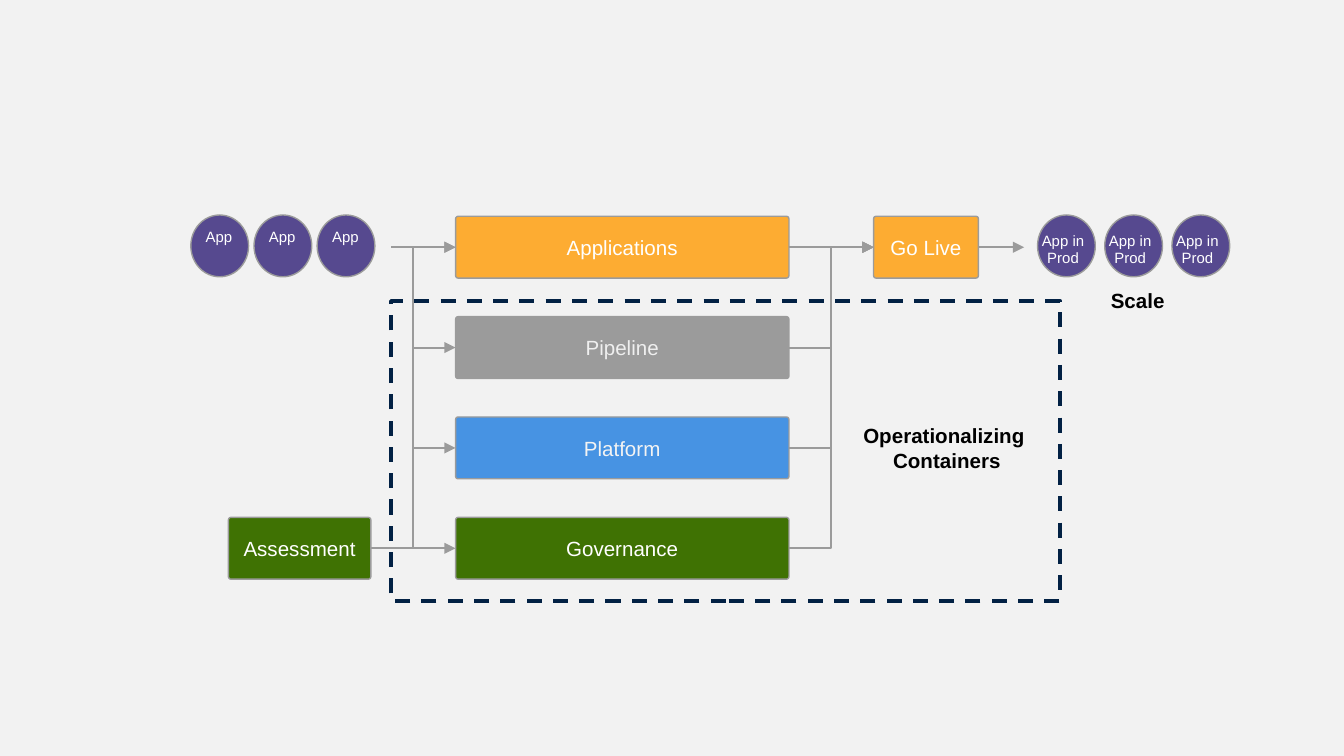
from lxml.etree import SubElement
from pptx import Presentation
from pptx.dml.color import RGBColor
from pptx.enum.dml import MSO_LINE
from pptx.enum.shapes import MSO_CONNECTOR, MSO_SHAPE
from pptx.enum.text import MSO_ANCHOR, PP_ALIGN
from pptx.oxml.ns import qn
from pptx.util import Inches, Pt

BACKGROUND = RGBColor(0xF2, 0xF2, 0xF2)
NAVY = RGBColor(0x02, 0x21, 0x44)
GRAY = RGBColor(0x9B, 0x9B, 0x9B)
GREEN = RGBColor(0x3F, 0x72, 0x03)
BLUE = RGBColor(0x47, 0x93, 0xE3)
ORANGE = RGBColor(0xFD, 0xAC, 0x32)
PURPLE = RGBColor(0x56, 0x49, 0x8F)
WHITE = RGBColor(0xFF, 0xFF, 0xFF)
PALE = RGBColor(0xF3, 0xF3, 0xF3)
SILVER = RGBColor(0xEF, 0xEF, 0xEF)
BLACK = RGBColor(0, 0, 0)

SLIDE_WIDTH = 10
SLIDE_HEIGHT = SLIDE_WIDTH * 9 / 16
ROW_TOP = 1.61
LAST_ROW_TOP = 3.85
BOX_HEIGHT = 0.46
ROW_MIDDLE = ROW_TOP + BOX_HEIGHT / 2
STAGES = [
    ("Applications", ORANGE, WHITE),
    ("Pipeline", GRAY, SILVER),
    ("Platform", BLUE, PALE),
    ("Governance", GREEN, WHITE),
]
ROW_STEP = (LAST_ROW_TOP - ROW_TOP) / (len(STAGES) - 1)


def write_text(shape, text, size=11, color=WHITE, bold=False,
               anchor=MSO_ANCHOR.MIDDLE, inset=0.05):
    frame = shape.text_frame
    frame.word_wrap = True
    frame.vertical_anchor = anchor
    frame.margin_left = frame.margin_right = Inches(0.1)
    frame.margin_top = frame.margin_bottom = Inches(inset)
    frame.text = text
    for para in frame.paragraphs:
        para.alignment = PP_ALIGN.CENTER
        for span in para.runs:
            span.font.name = "Arial"
            span.font.size = Pt(size)
            span.font.bold = bold
            span.font.color.rgb = color


def add_shape(shapes, kind, left, top, width, height, fill=None,
              line=GRAY, weight=0.75):
    shape = shapes.add_shape(kind, Inches(left), Inches(top),
                             Inches(width), Inches(height))
    shape.shadow.inherit = False
    if fill is None:
        shape.fill.background()
    else:
        shape.fill.solid()
        shape.fill.fore_color.rgb = fill
    shape.line.color.rgb = line
    shape.line.width = Pt(weight)
    return shape


def add_box(page, text, left, row, width, fill, color=WHITE):
    box = add_shape(page.shapes, MSO_SHAPE.ROUNDED_RECTANGLE, left,
                    ROW_TOP + row * ROW_STEP, width, BOX_HEIGHT, fill)
    box.adjustments[0] = 0.04
    write_text(box, text, color=color)
    return box


def add_label(shapes, text, left, top, width, height, **style):
    label = shapes.add_textbox(Inches(left), Inches(top),
                               Inches(width), Inches(height))
    write_text(label, text, anchor=MSO_ANCHOR.TOP, **style)


def add_arrow(page, start=None, end=None, start_x=0, end_x=0,
              kind=MSO_CONNECTOR.STRAIGHT):
    arrow = page.shapes.add_connector(kind, Inches(start_x), Inches(ROW_MIDDLE),
                                      Inches(end_x), Inches(ROW_MIDDLE))
    if start is not None:
        arrow.begin_connect(start, 3)
    if end is not None:
        arrow.end_connect(end, 1)
    arrow.line.color.rgb = GRAY
    arrow.line.width = Pt(1)
    line = arrow._element.spPr.find(qn("a:ln"))
    SubElement(line, qn("a:tailEnd"), type="triangle")
    SubElement(arrow._element.spPr, qn("a:effectLst"))


def add_app(page, text, left, label_shift, label_top, inset):
    group = page.shapes.add_group_shape()
    add_shape(group.shapes, MSO_SHAPE.OVAL, left, 1.6, 0.43, 0.46, PURPLE)
    add_label(group.shapes, text, left - label_shift, label_top, 0.56, 0.43,
              size=8, inset=inset)


def add_flow(page):
    stages = [add_box(page, text, 3.39, row, 2.48, fill, color)
              for row, (text, fill, color) in enumerate(STAGES)]
    assessment = add_box(page, "Assessment", 1.7, len(STAGES) - 1, 1.06, GREEN)
    go_live = add_box(page, "Go Live", 6.5, 0, 0.78, ORANGE)
    applications, governance = stages[0], stages[-1]
    for stage in stages[:-1]:
        add_arrow(page, assessment, stage, kind=MSO_CONNECTOR.ELBOW)
    for stage in stages[1:]:
        add_arrow(page, stage, go_live, kind=MSO_CONNECTOR.ELBOW)
    add_arrow(page, assessment, governance)
    add_arrow(page, applications, go_live)
    add_arrow(page, end=applications, start_x=2.91)
    add_arrow(page, start=go_live, end_x=7.62)


def main():
    deck = Presentation()
    deck.slide_width = Inches(SLIDE_WIDTH)
    deck.slide_height = Inches(SLIDE_HEIGHT)
    page = deck.slides.add_slide(deck.slide_layouts[6])
    page.background.fill.solid()
    page.background.fill.fore_color.rgb = BACKGROUND

    frame = add_shape(page.shapes, MSO_SHAPE.RECTANGLE, 2.91, 2.24, 4.98, 2.23,
                      line=NAVY, weight=2)
    frame.line.dash_style = MSO_LINE.DASH
    add_flow(page)
    add_label(page.shapes, "Operationalizing \vContainers", 6.25, 3.1, 1.59, 0.43,
              color=BLACK, bold=True)
    add_label(page.shapes, "Scale", 7.67, 2.09, 1.59, 0.25, color=BLACK, bold=True)
    for index in range(3):
        add_app(page, "App", 1.42 + index * 0.47, 0.07, 1.63, 0.14)
        add_app(page, "App in\nProd", 7.72 + index * 0.5, 0.09, 1.62, 0.1)
    deck.save("out.pptx")


if __name__ == "__main__":
    main()
